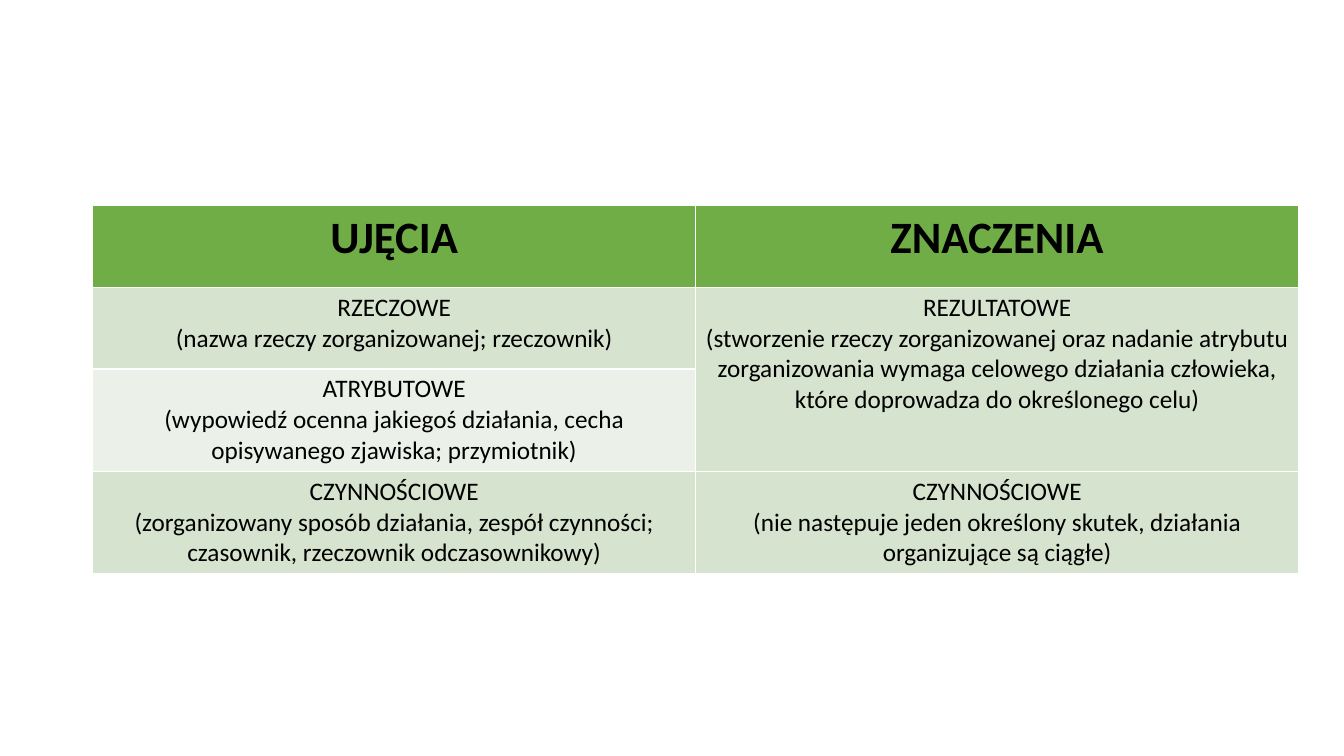
import pptx
import pptx.dml.color
import pptx.enum.text
import pptx.util

Inches, Pt = pptx.util.Inches, pptx.util.Pt
RGBColor = pptx.dml.color.RGBColor

HEADERS = ["UJĘCIA", "ZNACZENIA"]
ROWS = [
    [
        ("RZECZOWE", "(nazwa rzeczy zorganizowanej; rzeczownik)"),
        ("REZULTATOWE", "(stworzenie rzeczy zorganizowanej oraz nadanie atrybutu "
         "zorganizowania wymaga celowego działania człowieka, "
         "które doprowadza do określonego celu)"),
    ],
    [
        ("ATRYBUTOWE", "(wypowiedź ocenna jakiegoś działania, cecha "
         "opisywanego zjawiska; przymiotnik)"),
        None,
    ],
    [
        ("CZYNNOŚCIOWE", "(zorganizowany sposób działania, zespół czynności; "
         "czasownik, rzeczownik odczasownikowy)"),
        ("CZYNNOŚCIOWE", "(nie następuje jeden określony skutek, działania "
         "organizujące są ciągłe)"),
    ],
]

BLACK = RGBColor(0x00, 0x00, 0x00)
GREEN = RGBColor(0x70, 0xAD, 0x47)
BANDS = [RGBColor(0xD5, 0xE3, 0xCF), RGBColor(0xEB, 0xF1, 0xE9)]

LEFT, TOP = 0.92, 2.04
COL_WIDTH, ROW_HEIGHT = 5.98, 0.81


def fill_cell(cell, lines, color, size, bold):
    cell.fill.solid()
    cell.fill.fore_color.rgb = color
    tf = cell.text_frame
    tf.text = "\n".join(lines)
    for p in tf.paragraphs:
        p.alignment = pptx.enum.text.PP_ALIGN.CENTER
        p.font.name = "Calibri"
        p.font.size = Pt(size)
        p.font.bold = bold
        p.font.color.rgb = BLACK


def main():
    prs = pptx.Presentation()
    prs.slide_width, prs.slide_height = Inches(13.33), Inches(7.5)
    slide = prs.slides.add_slide(prs.slide_layouts[6])

    n_rows, n_cols = len(ROWS) + 1, len(HEADERS)
    table = slide.shapes.add_table(
        n_rows, n_cols, Inches(LEFT), Inches(TOP),
        Inches(n_cols * COL_WIDTH), Inches(n_rows * ROW_HEIGHT)).table

    for c, header in enumerate(HEADERS):
        fill_cell(table.cell(0, c), [header], GREEN, 32, True)
    for r, row in enumerate(ROWS, start=1):
        for c, lines in enumerate(row):
            if lines:
                fill_cell(table.cell(r, c), lines, BANDS[(r - 1) % 2], 18, False)
            else:
                table.cell(r - 1, c).merge(table.cell(r, c))

    prs.save("out.pptx")


if __name__ == "__main__":
    main()
